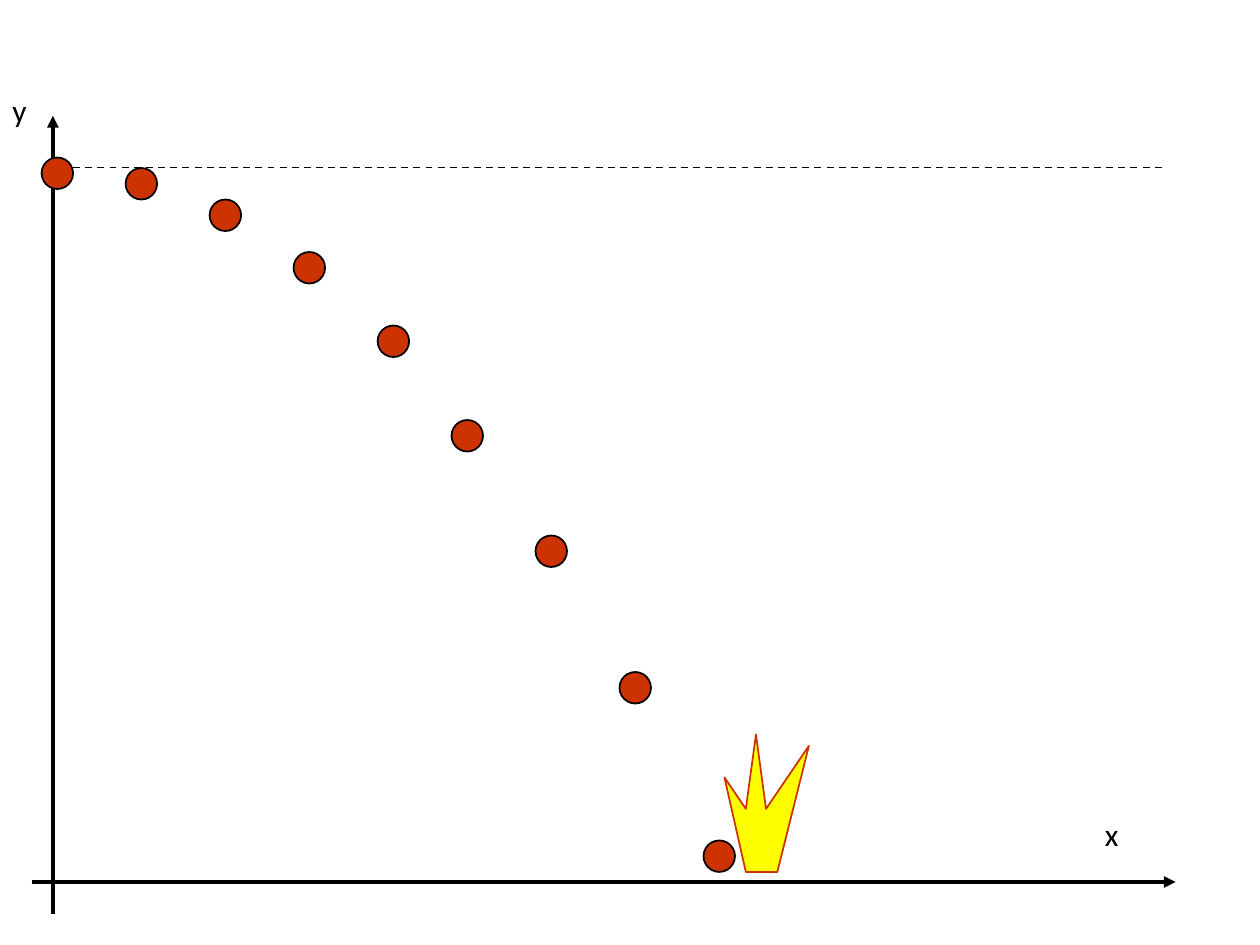
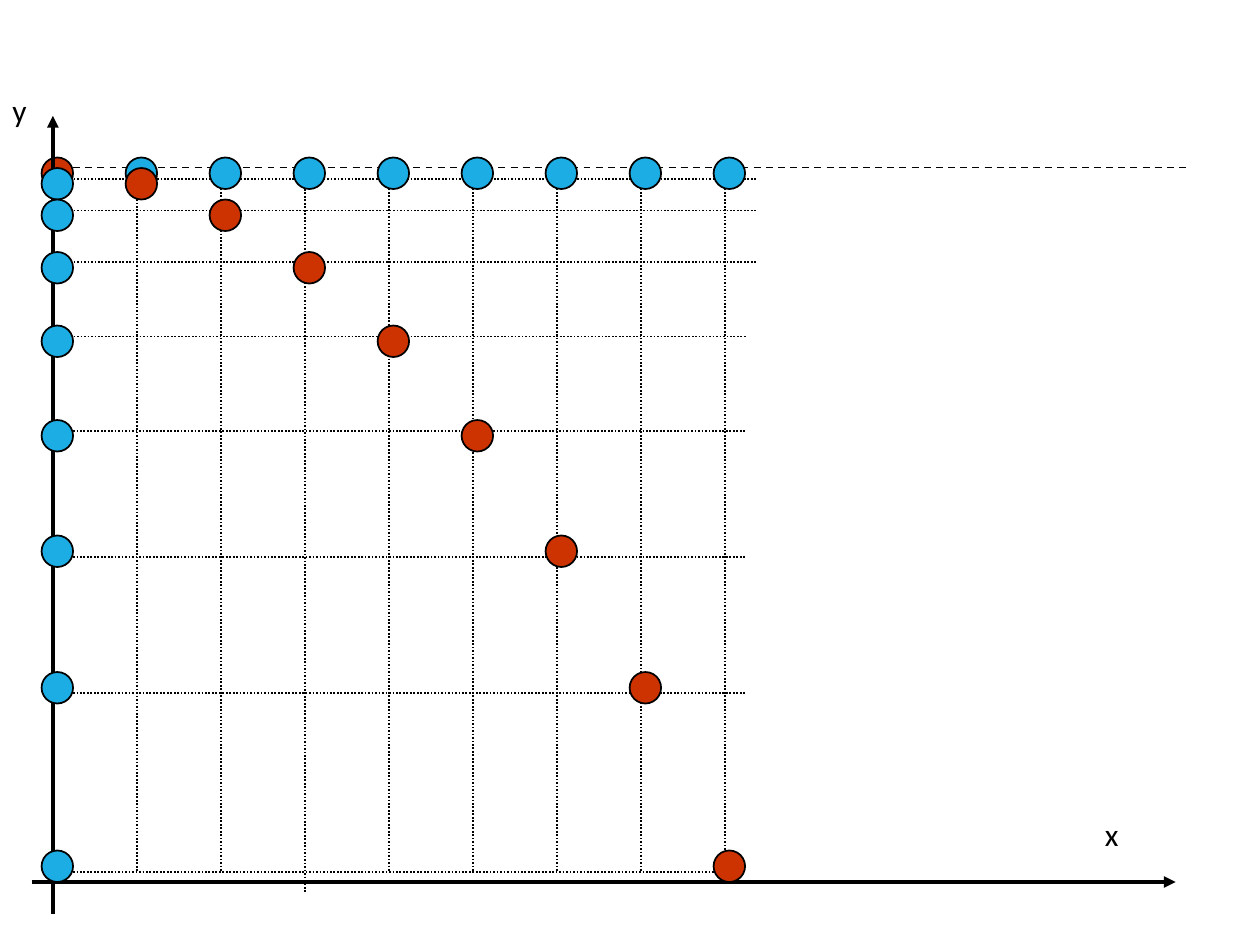
from lxml.etree import SubElement
from pptx import Presentation
from pptx.dml.color import RGBColor
from pptx.enum.dml import MSO_LINE_DASH_STYLE as Dash
from pptx.enum.shapes import MSO_CONNECTOR, MSO_SHAPE
from pptx.enum.text import MSO_AUTO_SIZE, MSO_ANCHOR
from pptx.oxml.ns import qn
from pptx.util import Inches, Pt

BLACK, RED, BLUE, YELLOW = "000000", "CC3300", "1CADE4", "FFFF00"
FRAME_FORMAT = {"word_wrap": True, "auto_size": MSO_AUTO_SIZE.SHAPE_TO_FIT_TEXT,
                "vertical_anchor": MSO_ANCHOR.TOP}
FONT_FORMAT = {"name": "Calibri", "size": Pt(18)}

# Motion: equal steps sideways, fall growing with the square of time
DIAMETER = 0.25
START_LEFT, START_TOP = 0.33, 1.25
STEP = 2 / 3
AXIS_X, AXIS_Y, HORIZON_Y = 0.42, 7, 1.33
lefts = [START_LEFT + STEP * n for n in range(9)]
tops = [START_TOP + n ** 2 / 12 for n in range(8)]  # landing is set per slide


def add_line(slide, start, end, width=1, dash=None, arrow=False):
    ends = [Inches(value) for value in (*start, *end)]
    connector = slide.shapes.add_connector(MSO_CONNECTOR.STRAIGHT, *ends)
    connector.line.color.rgb = RGBColor.from_string(BLACK)
    connector.line.width = Pt(width)
    if dash:
        connector.line.dash_style = dash
    properties = connector._element.spPr
    if arrow:
        SubElement(properties.find(qn("a:ln")), qn("a:tailEnd"), type="triangle")
    SubElement(properties, qn("a:effectLst"))


def add_ball(shapes, left, top, colour):
    ball = shapes.add_shape(MSO_SHAPE.OVAL, Inches(left), Inches(top),
                            Inches(DIAMETER), Inches(DIAMETER))
    ball.shadow.inherit = False
    ball.fill.solid()
    ball.fill.fore_color.rgb = RGBColor.from_string(colour)
    ball.line.color.rgb = RGBColor.from_string(BLACK)
    ball.line.width = Pt(1)


deck = Presentation()
deck.slide_width, deck.slide_height = Inches(10), Inches(7.5)
blank = deck.slide_layouts[6]
trajectory = deck.slides.add_slide(blank)
components = deck.slides.add_slide(blank)

# Dotted grid and starting ball lie behind the axes of the second slide
levels = [(1.42, AXIS_X, 6), (1.67, AXIS_X, 6), (2.08, AXIS_X, 6),
          (2.67, AXIS_X, 5.92), (3.42, 0.58, 5.92), (4.42, 0.58, 5.92),
          (5.5, 0.58, 5.92), (6.92, 0.58, 5.67)]
for y, left, right in levels:
    add_line(components, (left, y), (right, y), dash=Dash.ROUND_DOT)
uneven_spans = {1: (1.58, 6.92), 3: (1.5, 7.08)}
for n in range(1, 9):
    x = AXIS_X + STEP * n
    top, bottom = uneven_spans.get(n, (HORIZON_Y, 6.92))
    add_line(components, (x, top), (x, bottom), dash=Dash.ROUND_DOT)
add_ball(components.shapes, START_LEFT, START_TOP, RED)

# Axes, axis labels and launch level on both slides
for slide, level_end in ((trajectory, 9.25), (components, 9.42)):
    add_line(slide, (AXIS_X, 7.25), (AXIS_X, 0.92), width=2.25, arrow=True)
    add_line(slide, (0.25, AXIS_Y), (9.33, AXIS_Y), width=2.25, arrow=True)
    add_line(slide, (0.58, HORIZON_Y), (level_end, HORIZON_Y), dash=Dash.DASH)
    for name, left, top, width in (("x", 8.67, 6.42, 1), ("y", 0, 0.67, 0.42)):
        label = slide.shapes.add_textbox(Inches(left), Inches(top),
                                         Inches(width), Inches(0.5))
        frame = label.text_frame
        for attribute, value in FRAME_FORMAT.items():
            setattr(frame, attribute, value)
        run = frame.paragraphs[0].add_run()
        run.text = name
        for attribute, value in FONT_FORMAT.items():
            setattr(run.font, attribute, value)
        run.font.color.rgb = RGBColor.from_string(BLACK)

# First slide: the path of the ball, drawn slightly short from the fifth step
for n, (left, top) in enumerate(zip(lefts, tops + [6.67])):
    add_ball(trajectory.shapes, left - (0.08 if n >= 5 else 0), top, RED)

# Impact flame
flame_points = [(5.92, 6.92), (5.75, 6.17), (5.92, 6.42), (6, 5.83),
                (6.08, 6.42), (6.42, 5.92), (6.17, 6.92)]
flame_start, *flame_rest = [(Inches(x), Inches(y)) for x, y in flame_points]
outline = trajectory.shapes.build_freeform(*flame_start)
outline.add_line_segments(flame_rest, close=True)
flame = outline.convert_to_shape()
flame.shadow.inherit = False
flame.fill.solid()
flame.fill.fore_color.rgb = RGBColor.from_string(YELLOW)
flame.line.color.rgb = RGBColor.from_string(RED)
flame.line.width = Pt(1)

# Second slide: each moment groups the ball with its two projections
for left, top in list(zip(lefts, tops + [6.75]))[1:]:
    moment = components.shapes.add_group_shape()
    add_ball(moment.shapes, left, START_TOP, BLUE)
    add_ball(moment.shapes, START_LEFT, top, BLUE)
    add_ball(moment.shapes, left, top, RED)

deck.save("out.pptx")
